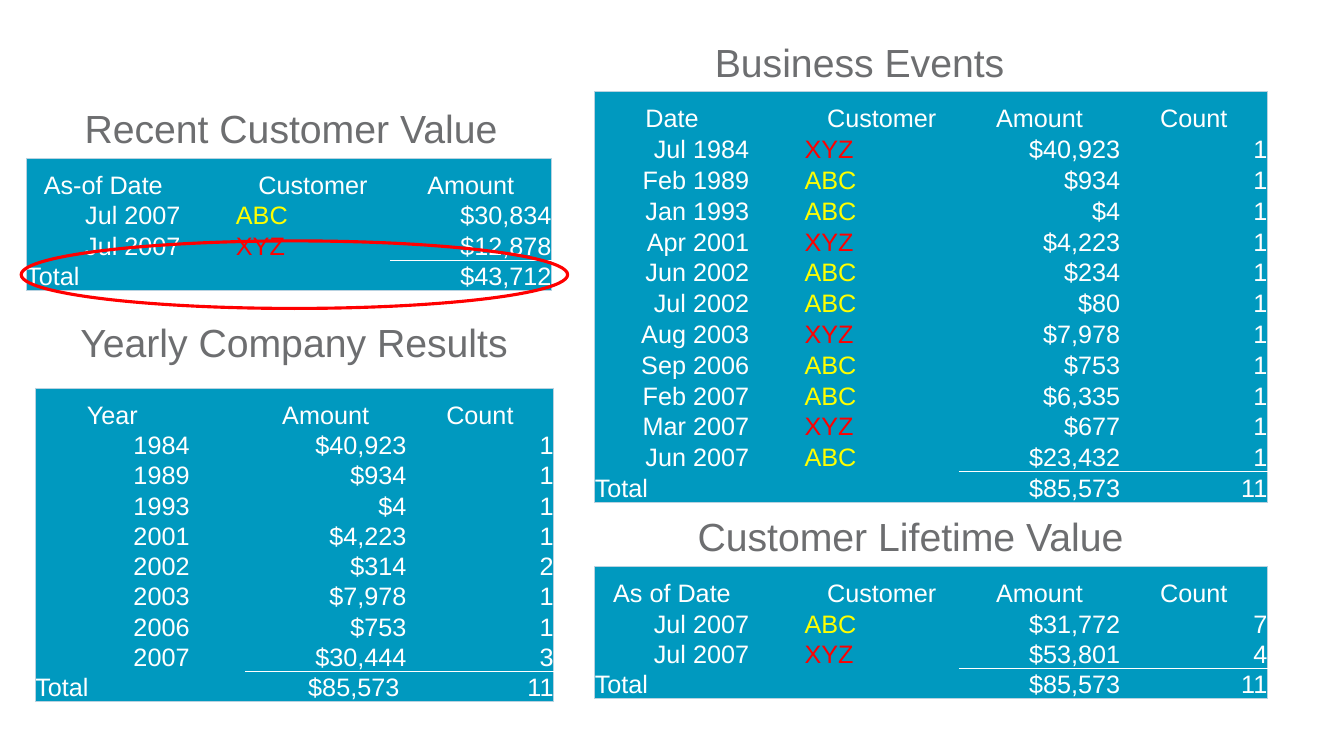
import pptx
import pptx.util
import pptx.dml.color
import pptx.enum.shapes
import pptx.enum.text
import pptx.oxml.ns
from lxml import etree

RGBColor = pptx.dml.color.RGBColor
ALIGN = pptx.enum.text.PP_ALIGN
ANCHOR = pptx.enum.text.MSO_ANCHOR

TEAL = RGBColor(0x00, 0x99, 0xBF)
WHITE = RGBColor(0xFF, 0xFF, 0xFF)
RED = RGBColor(0xFF, 0x00, 0x00)
YELLOW = RGBColor(0xFF, 0xFF, 0x00)
GRAY = RGBColor(0x6D, 0x6E, 0x70)
PALE_BLUE = RGBColor(0xB8, 0xD2, 0xE0)
CUSTOMER_COLORS = {"ABC": YELLOW, "XYZ": RED}

# The slide is a grid of 1333 columns by 750 rows
UNIT = pptx.util.Inches(0.01)
SLIDE_COLUMNS, SLIDE_ROWS = 1333, 750
DATE, GAP, CUSTOMER, AMOUNT, COUNT = 153, 55, 153, 160, 146
HEADER_HEIGHT = 41
TITLE_HEIGHT = 53

EVENTS = [
    ["Date", "", "Customer", "Amount", "Count"],
    ["Jul 1984", "", "XYZ", "$40,923", "1"],
    ["Feb 1989", "", "ABC", "$934", "1"],
    ["Jan 1993", "", "ABC", "$4", "1"],
    ["Apr 2001", "", "XYZ", "$4,223", "1"],
    ["Jun 2002", "", "ABC", "$234", "1"],
    ["Jul 2002", "", "ABC", "$80", "1"],
    ["Aug 2003", "", "XYZ", "$7,978", "1"],
    ["Sep 2006", "", "ABC", "$753", "1"],
    ["Feb 2007", "", "ABC", "$6,335", "1"],
    ["Mar 2007", "", "XYZ", "$677", "1"],
    ["Jun 2007", "", "ABC", "$23,432", "1"],
    ["Total", "", "", "$85,573", "11"],
]
LIFETIME = [
    ["As of Date", "", "Customer", "Amount", "Count"],
    ["Jul 2007", "", "ABC", "$31,772", "7"],
    ["Jul 2007", "", "XYZ", "$53,801", "4"],
    ["Total", "", "", "$85,573", "11"],
]
YEARLY = [
    ["Year", "", "Amount", "Count"],
    ["1984", "", "$40,923", "1"],
    ["1989", "", "$934", "1"],
    ["1993", "", "$4", "1"],
    ["2001", "", "$4,223", "1"],
    ["2002", "", "$314", "2"],
    ["2003", "", "$7,978", "1"],
    ["2006", "", "$753", "1"],
    ["2007", "", "$30,444", "3"],
    ["Total", "", "$85,573 ", "11"],
]
RECENT = [
    ["As-of Date", "", "Customer", "Amount"],
    ["Jul 2007", "", "ABC", "$30,834"],
    ["Jul 2007", "", "XYZ", "$12,878"],
    ["Total", "", "", "$43,712"],
]


def add_text(paragraph, text, size, color):
    paragraph.line_spacing = 0.9
    if text:
        run = paragraph.add_run()
        run.text = text
        run.font.name = "Arial"
        run.font.size = pptx.util.Pt(size)
        run.font.color.rgb = color


def set_borders(cell, borders):
    """Draw the given sides as (color, points) and clear the others."""
    properties = cell._tc.get_or_add_tcPr()
    qn = pptx.oxml.ns.qn
    for index, side in enumerate("LRTB"):
        line = etree.Element(qn(f"a:ln{side}"))
        properties.insert(index, line)
        if side in borders:
            color, points = borders[side]
            line.set("w", str(pptx.util.Pt(points)))
            fill = etree.SubElement(line, qn("a:solidFill"))
            etree.SubElement(fill, qn("a:srgbClr"), val=str(color))
        else:
            etree.SubElement(line, qn("a:noFill"))


def cell_borders(row, column, last_row, last_column, amount_column):
    outline, rule = (PALE_BLUE, 0.75), (WHITE, 1)
    edges = {"L": column == 0, "R": column == last_column,
             "T": row == 0, "B": row == last_row}
    borders = {side: outline for side, on_edge in edges.items() if on_edge}
    # Rule between the last entry and the totals
    if column >= amount_column and row >= last_row - 1:
        borders["T" if row == last_row else "B"] = rule
    return borders


def add_title(slide, text, left, top, width):
    box = slide.shapes.add_textbox(
        left * UNIT, top * UNIT, width * UNIT, TITLE_HEIGHT * UNIT)
    box.text_frame.word_wrap = False
    box.text_frame.auto_size = pptx.enum.text.MSO_AUTO_SIZE.SHAPE_TO_FIT_TEXT
    paragraph = box.text_frame.paragraphs[0]
    paragraph.alignment = ALIGN.CENTER
    add_text(paragraph, text, 28, GRAY)


def add_ledger(slide, rows, left, top, widths, row_height):
    heights = [HEADER_HEIGHT] + [row_height] * (len(rows) - 1)
    table = slide.shapes.add_table(
        len(rows), len(widths), left * UNIT, top * UNIT,
        sum(widths) * UNIT, sum(heights) * UNIT).table
    table.first_row = table.horz_banding = False
    for column, width in zip(table.columns, widths):
        column.width = width * UNIT
    for row, height in zip(table.rows, heights):
        row.height = height * UNIT

    last_row, last_column = len(rows) - 1, len(widths) - 1
    amount_column = rows[0].index("Amount")
    for row, texts in enumerate(rows):
        for column, text in enumerate(texts):
            cell = table.cell(row, column)
            cell.margin_left = cell.margin_right = 0
            cell.margin_top = cell.margin_bottom = 0
            cell.vertical_anchor = ANCHOR.BOTTOM
            cell.fill.solid()
            cell.fill.fore_color.rgb = TEAL
            set_borders(cell, cell_borders(
                row, column, last_row, last_column, amount_column))
            paragraph = cell.text_frame.paragraphs[0]
            if row == 0:
                paragraph.alignment = ALIGN.CENTER
            elif text == "Total" or text in CUSTOMER_COLORS:
                paragraph.alignment = ALIGN.LEFT
            else:
                paragraph.alignment = ALIGN.RIGHT
            add_text(paragraph, text, 18, CUSTOMER_COLORS.get(text, WHITE))


def add_panel(slide, box, title, rows, widths, row_height,
              title_indent, title_width, title_space=TITLE_HEIGHT):
    """Place a title and its table; box is the left and top of the panel."""
    left, top = box
    add_ledger(slide, rows, left, top + title_space, widths, row_height)
    add_title(slide, title, left + title_indent, top, title_width)


def add_highlight(slide, left, top, width, height):
    ellipse = slide.shapes.add_shape(
        pptx.enum.shapes.MSO_SHAPE.OVAL,
        left * UNIT, top * UNIT, width * UNIT, height * UNIT)
    ellipse.shadow.inherit = False
    ellipse.fill.background()
    ellipse.line.color.rgb = RED
    ellipse.line.width = pptx.util.Pt(2.25)


def main():
    presentation = pptx.Presentation()
    presentation.slide_width = SLIDE_COLUMNS * UNIT
    presentation.slide_height = SLIDE_ROWS * UNIT
    slide = presentation.slides.add_slide(presentation.slide_layouts[6])

    # Right half: events and lifetime value
    full = [DATE, GAP, CUSTOMER, AMOUNT, COUNT]
    add_panel(slide, (590, 38), "Business Events", EVENTS, full, 28, 107, 311)
    add_panel(slide, (590, 509), "Customer Lifetime Value", LIFETIME, full, 28,
              89, 448)

    # Left half: yearly results and recent value
    add_panel(slide, (35, 316), "Yearly Company Results", YEARLY,
              [DATE, GAP, AMOUNT, COUNT], 30, 32, 449, title_space=69)
    add_panel(slide, (26, 104), "Recent Customer Value", RECENT,
              [DATE, GAP, CUSTOMER, AMOUNT], 30, 45, 435)

    # Ring around the recent total
    add_highlight(slide, 21, 239, 542, 67)
    presentation.save("out.pptx")


if __name__ == "__main__":
    main()
